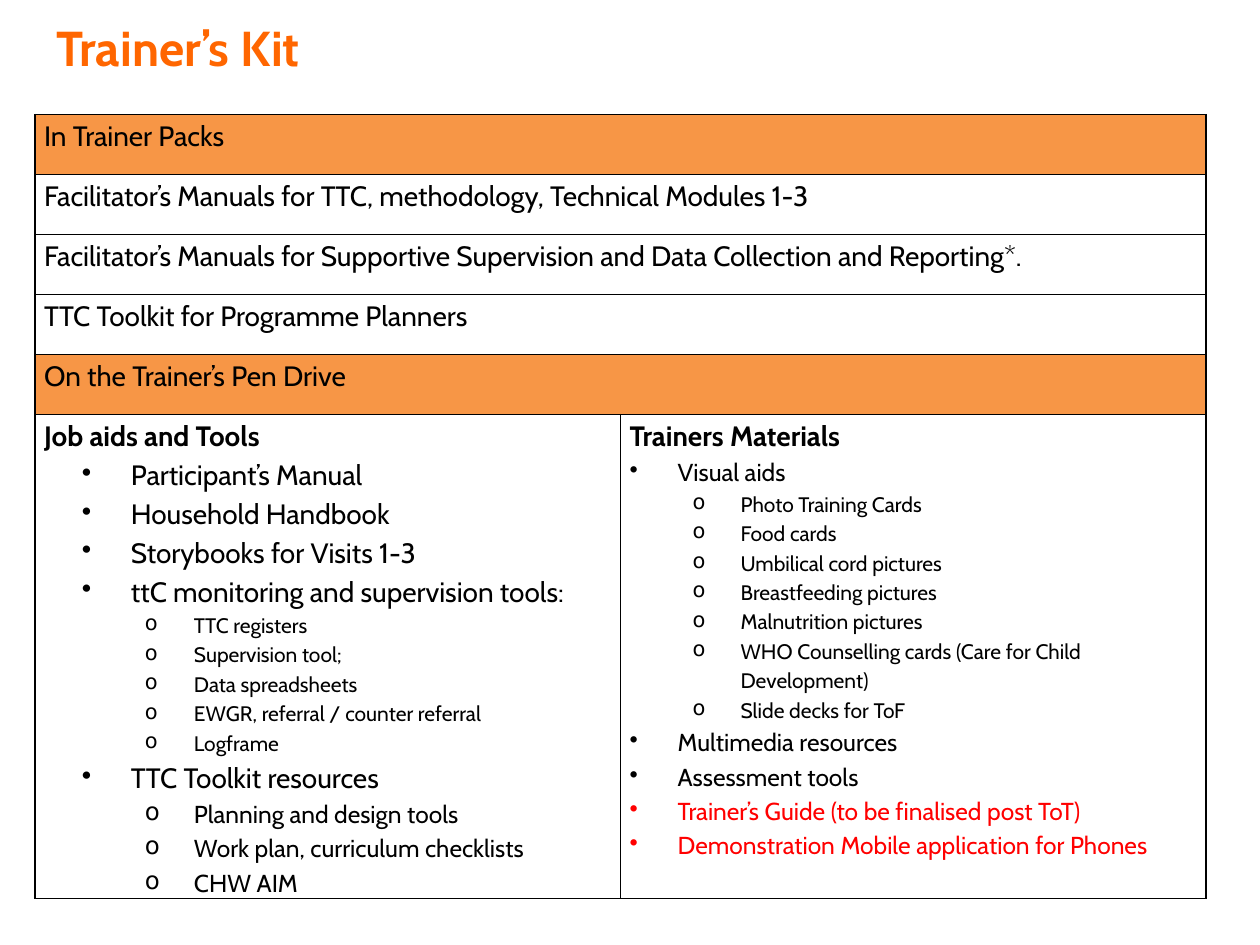
from dataclasses import dataclass

import lxml.etree
import pptx
import pptx.dml.color
import pptx.enum.text
import pptx.oxml.ns
import pptx.util

Cm, Pt = pptx.util.Cm, pptx.util.Pt
RGB = pptx.dml.color.RGBColor.from_string
qn = pptx.oxml.ns.qn


@dataclass(frozen=True)
class Theme:
    font: str = "Cabin"
    title_colour: str = "FF6600"
    band: str = "F79646"
    ink: str = "000000"
    pending: str = "FF0000"
    title: int = 28
    large: int = 16
    medium: int = 14
    small: int = 12


theme = Theme()


def write_line(paragraph, wording, size, colour=theme.ink, bold=False,
               bullet=None, level=0, left=0.97, hanging=0.97):
    """Fill one table paragraph; left and hanging are in centimetres."""
    properties = paragraph._p.get_or_add_pPr()
    properties.set("marL", str(Cm(left)))
    properties.set("indent", str(-Cm(hanging)))
    if bullet:
        lxml.etree.SubElement(properties, qn("a:buChar"), char=bullet)
    paragraph.level = level
    paragraph.line_spacing = 1.15
    paragraph.text = wording
    font = paragraph.runs[0].font
    font.name, font.size, font.bold = theme.font, Pt(size), bold
    font.color.rgb = RGB(colour)


def add_borders(cell):
    properties = cell._tc.get_or_add_tcPr()
    for position, side in enumerate(("lnL", "lnR", "lnT", "lnB")):
        line = lxml.etree.Element(qn(f"a:{side}"), w=str(Pt(1)))
        fill = lxml.etree.SubElement(line, qn("a:solidFill"))
        lxml.etree.SubElement(fill, qn("a:srgbClr"), val=theme.ink)
        properties.insert(position, line)


presentation = pptx.Presentation()
presentation.slide_width, presentation.slide_height = Cm(25.4), Cm(19.05)
slide = presentation.slides.add_slide(presentation.slide_layouts[6])

# Kit table: full-width rows above a two-column list of contents
full_rows = [
    ("In Trainer Packs", True),
    ("Facilitator’s Manuals for TTC, methodology, Technical Modules 1-3", False),
    ("Facilitator’s Manuals for Supportive Supervision and Data Collection and Reporting*.", False),
    ("TTC Toolkit for Programme Planners", False),
    ("On the Trainer’s Pen Drive", True),
]
last = len(full_rows)
kit = slide.shapes.add_table(last + 1, 2, Cm(0.71), Cm(2.31), Cm(23.6), Cm(16.28)).table
kit.first_row = kit.horz_banding = False
for column in kit.columns:
    column.width = Cm(11.8)
for row in kit.rows:
    row.height = Cm(1.21)
kit.rows[last].height = Cm(8.97)

for cell in kit.iter_cells():
    cell.margin_left = cell.margin_right = Cm(0.18)
    cell.margin_top = cell.margin_bottom = 0
    cell.fill.background()
    add_borders(cell)

for index, (wording, is_band) in enumerate(full_rows):
    cell = kit.cell(index, 0)
    cell.merge(kit.cell(index, 1))
    if is_band:
        for half in (cell, kit.cell(index, 1)):
            half.fill.solid()
            half.fill.fore_color.rgb = RGB(theme.band)
    write_line(cell.text_frame.paragraphs[0], wording, theme.large)

heading = dict(size=theme.large, bold=True)
aid = dict(size=theme.large, bullet="•", level=1, left=1.75, hanging=0.99)
tool = dict(size=theme.small, bullet="o", level=3, left=3.02, hanging=0.99)
planning = dict(tool, size=theme.medium)
material = dict(size=theme.medium, bullet="•")
visual = dict(size=theme.small, bullet="o", level=1, left=2.24)
pending = dict(material, colour=theme.pending)

pen_drive = [
    [
        (heading, ["Job aids and Tools"]),
        (aid, ["Participant’s Manual", "Household Handbook", "Storybooks for Visits 1-3",
               "ttC monitoring and supervision tools:"]),
        (tool, ["TTC registers", "Supervision tool;", "Data spreadsheets",
                "EWGR, referral / counter referral", "Logframe"]),
        (aid, ["TTC Toolkit resources"]),
        (planning, ["Planning and design tools", "Work plan, curriculum checklists", "CHW AIM"]),
    ],
    [
        (heading, ["Trainers Materials"]),
        (material, ["Visual aids"]),
        (visual, ["Photo Training Cards", "Food cards", "Umbilical cord pictures",
                  "Breastfeeding pictures", "Malnutrition pictures",
                  "WHO Counselling cards (Care for Child Development)",
                  "Slide decks for ToF"]),
        (material, ["Multimedia resources", "Assessment tools"]),
        (pending, ["Trainer’s Guide (to be finalised post ToT)",
                   "Demonstration Mobile application for Phones"]),
    ],
]
for column, groups in enumerate(pen_drive):
    frame = kit.cell(last, column).text_frame
    lines = [(wording, style) for style, wordings in groups for wording in wordings]
    for index, (wording, style) in enumerate(lines):
        paragraph = frame.add_paragraph() if index else frame.paragraphs[0]
        write_line(paragraph, wording, **style)

# Title
title = slide.shapes.add_textbox(Cm(0.89), 0, Cm(13), Cm(3.68)).text_frame
title.word_wrap = True
title.vertical_anchor = pptx.enum.text.MSO_ANCHOR.TOP
title.margin_left = title.margin_right = Cm(0.25)
title.margin_top, title.margin_bottom = Cm(0.36), Cm(0.43)
title.text = "Trainer’s Kit"
title_font = title.paragraphs[0].runs[0].font
title_font.name, title_font.size, title_font.bold = theme.font, Pt(theme.title), True
title_font.color.rgb = RGB(theme.title_colour)

presentation.save("out.pptx")
